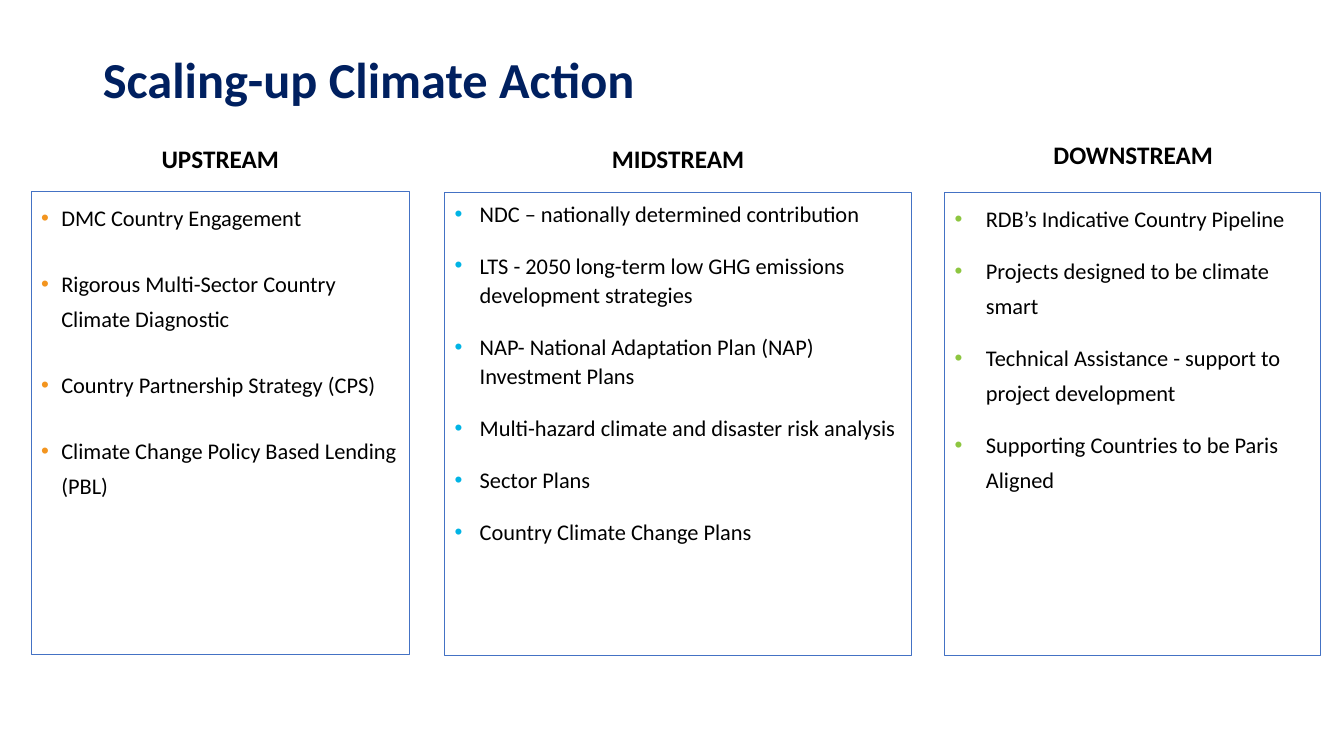
from lxml import etree
from pptx import Presentation
from pptx.dml.color import RGBColor
from pptx.enum.shapes import MSO_SHAPE
from pptx.enum.text import MSO_ANCHOR, MSO_AUTO_SIZE, PP_ALIGN
from pptx.oxml.ns import qn
from pptx.util import Inches, Pt

RECT = MSO_SHAPE.RECTANGLE
TOP, MIDDLE = MSO_ANCHOR.TOP, MSO_ANCHOR.MIDDLE
LEFT, CENTER = PP_ALIGN.LEFT, PP_ALIGN.CENTER
FIXED = MSO_AUTO_SIZE.NONE

COLORS = {
    "navy": "002060", "black": "000000", "blue": "4472C4",
    "orange": "F3951F", "cyan": "01B4E5", "green": "8DC640",
}

# Each stream: heading place, box place, list format and items
STREAMS = [
    {
        "head": "UPSTREAM",
        "head_at": (0.31, 1.37, 3.75, 0.4),
        "box_at": (0.31, 1.9, 3.75, 4.59),
        "bullet": "orange", "indent": 0.2,
        "space": {"line_spacing": Pt(25), "space_before": Pt(10), "space_after": Pt(12)},
        "items": [
            "DMC Country Engagement",
            "Rigorous Multi-Sector Country Climate Diagnostic",
            "Country Partnership Strategy (CPS)",
            "Climate Change Policy Based Lending (PBL)",
        ],
    },
    {
        "head": "MIDSTREAM",
        "head_at": (4.41, 1.37, 4.63, 0.4),
        "box_at": (4.41, 1.91, 4.63, 4.59),
        "bullet": "cyan", "indent": 0.25,
        "space": {"line_spacing": Pt(21), "space_before": Pt(10), "space_after": Pt(6)},
        "items": [
            "NDC – nationally determined contribution",
            "LTS - 2050 long-term low GHG emissions development strategies",
            "NAP- National Adaptation Plan (NAP) Investment Plans",
            "Multi-hazard climate and disaster risk analysis",
            "Sector Plans",
            "Country Climate Change Plans",
        ],
    },
    {
        "head": "DOWNSTREAM",
        "head_at": (9.36, 1.33, 3.76, 0.41),
        "box_at": (9.37, 1.91, 3.73, 4.59),
        "bullet": "green", "indent": 0.31,
        "space": {"line_spacing": Pt(25), "space_before": Pt(0), "space_after": Pt(12)},
        "items": [
            "RDB’s Indicative Country Pipeline",
            "Projects designed to be climate smart",
            "Technical Assistance - support to project development",
            "Supporting Countries to be Paris Aligned",
        ],
    },
]


def color(name):
    return RGBColor.from_string(COLORS[name])


def apply(target, values):
    for key, value in values.items():
        setattr(target, key, value)


def place(at):
    return [Inches(value) for value in at]


def write(para, text, size, tone="black", bold=False):
    run = para.add_run()
    run.text = text
    apply(run.font, {"name": "Calibri", "size": Pt(size), "bold": bold})
    run.font.color.rgb = color(tone)


def add_bullet(para, tone, indent):
    props = para._p.get_or_add_pPr()
    props.set("marL", str(Inches(indent)))
    props.set("indent", str(-Inches(indent)))
    fill = etree.SubElement(props, qn("a:buClr"))
    etree.SubElement(fill, qn("a:srgbClr"), val=COLORS[tone])
    etree.SubElement(props, qn("a:buFont"), typeface="Arial")
    etree.SubElement(props, qn("a:buChar"), char="•")


def set_title(slide, text, at):
    title = slide.shapes.title
    apply(title, dict(zip(("left", "top", "width", "height"), place(at))))
    frame = title.text_frame
    apply(frame, {"word_wrap": True, "auto_size": FIXED, "vertical_anchor": MIDDLE})
    para = frame.paragraphs[0]
    apply(para, {"alignment": LEFT, "line_spacing": 0.9})
    write(para, text, 36, "navy", True)


def add_head(slide, text, at):
    frame = slide.shapes.add_textbox(*place(at)).text_frame
    frame.word_wrap = True
    para = frame.paragraphs[0]
    para.alignment = CENTER
    write(para, text, 18, bold=True)


def add_list(slide, stream):
    box = slide.shapes.add_shape(RECT, *place(stream["box_at"]))
    box.shadow.inherit = False
    box.fill.background()
    box.line.color.rgb = color("blue")
    box.line.width = Pt(0.75)
    frame = box.text_frame
    apply(frame, {"word_wrap": True, "vertical_anchor": TOP})
    for index, item in enumerate(stream["items"]):
        para = frame.paragraphs[0] if index == 0 else frame.add_paragraph()
        add_bullet(para, stream["bullet"], stream["indent"])
        apply(para, {"alignment": LEFT, **stream["space"]})
        if index == 0:
            para.space_before = Pt(0)
        write(para, item, 16)


def main():
    deck = Presentation()
    apply(deck, {"slide_width": Inches(13.33), "slide_height": Inches(7.5)})
    slide = deck.slides.add_slide(deck.slide_layouts.get_by_name("Title Only"))

    # Title
    set_title(slide, "Scaling-up Climate Action", (0.92, 0.4, 11.5, 0.84))

    # Three streams
    for stream in STREAMS:
        add_list(slide, stream)
        add_head(slide, stream["head"], stream["head_at"])

    deck.save("out.pptx")


if __name__ == "__main__":
    main()
